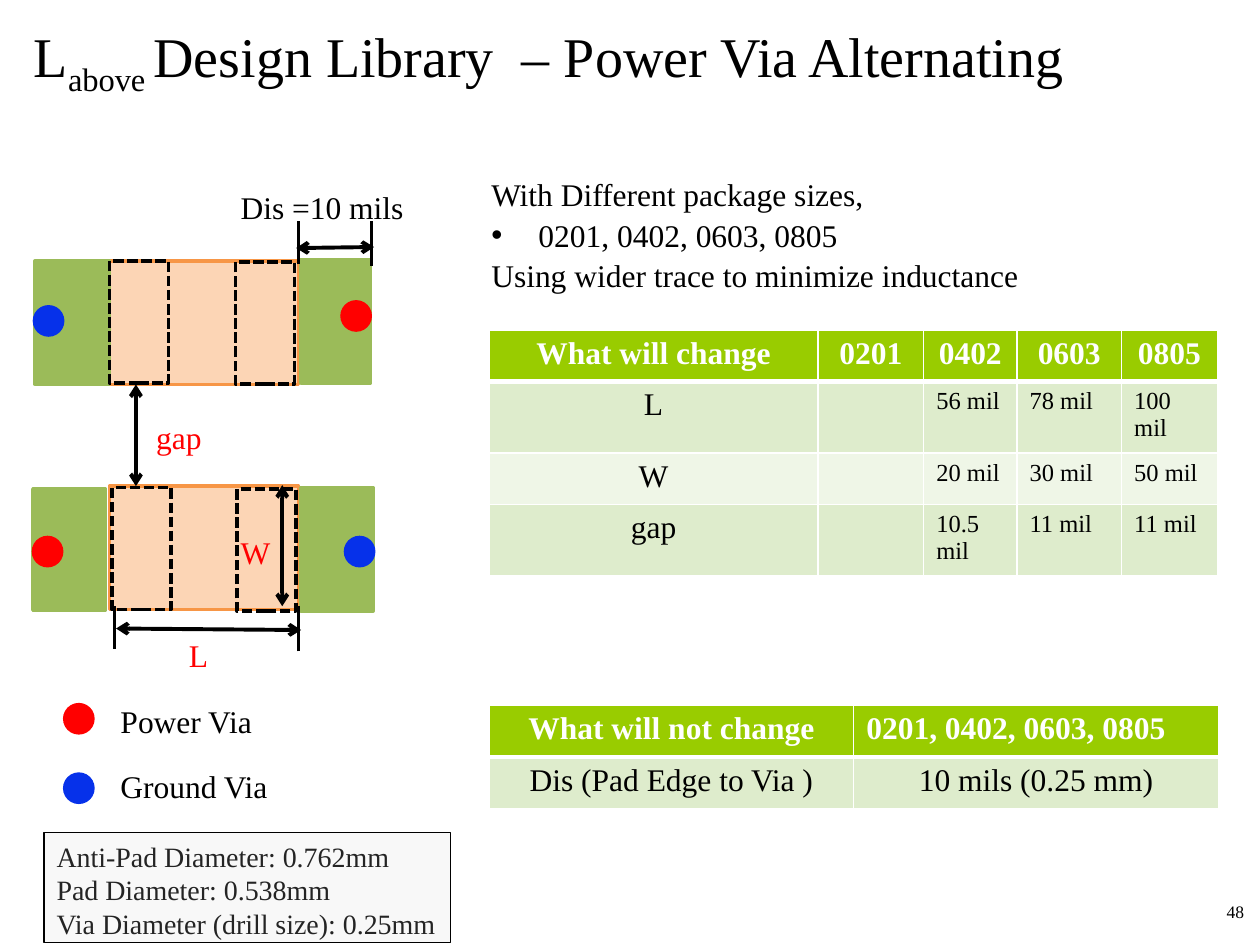
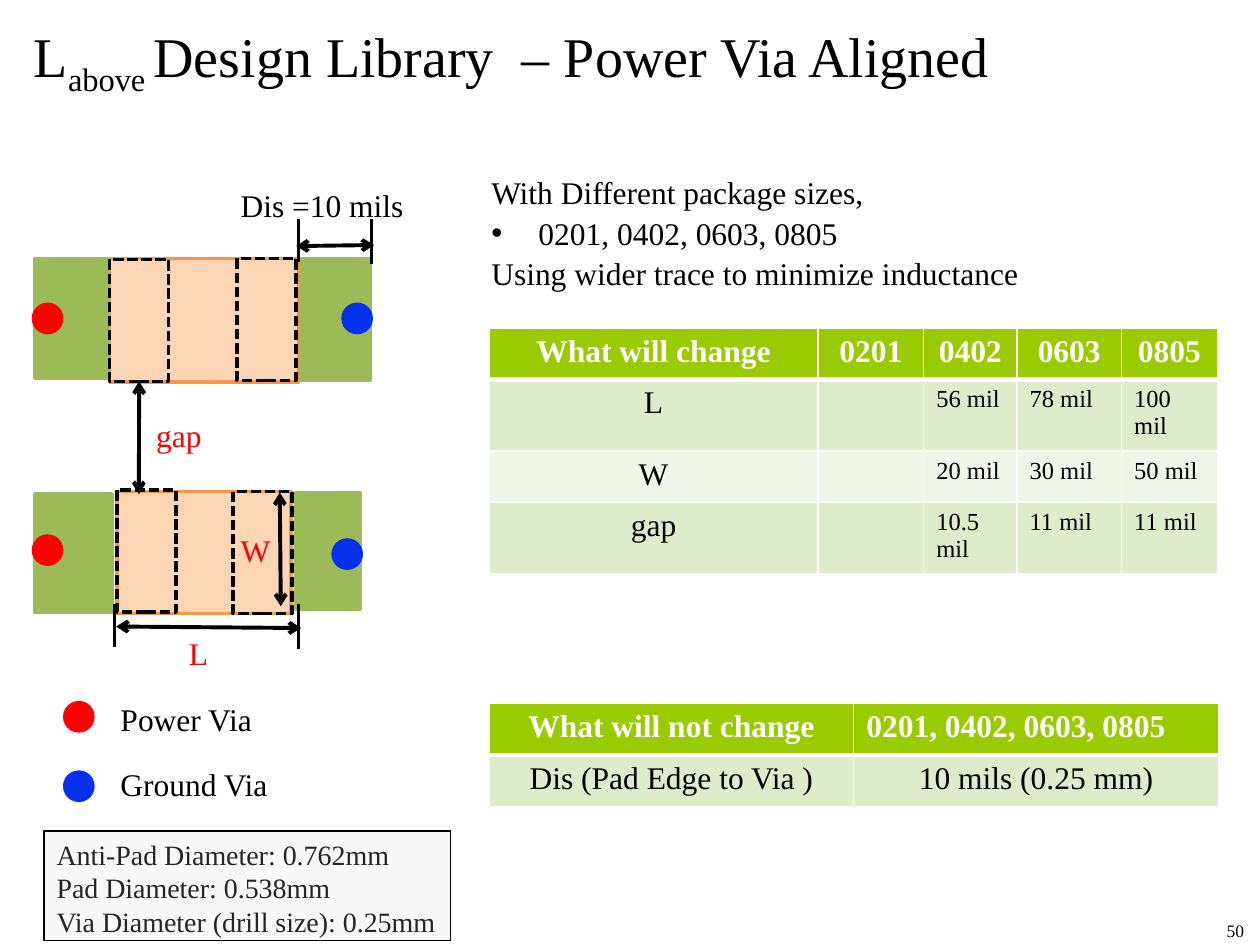
from dataclasses import dataclass

from pptx import Presentation
from pptx.dml.color import RGBColor
from pptx.enum.dml import MSO_LINE
from pptx.enum.shapes import MSO_CONNECTOR, MSO_SHAPE
from pptx.enum.text import MSO_ANCHOR, MSO_AUTO_SIZE, PP_ALIGN
from pptx.oxml.ns import qn
from pptx.util import Cm, Pt
from lxml import etree

FONT = "Times New Roman"
BLACK = RGBColor(0x00, 0x00, 0x00)
WHITE = RGBColor(0xFF, 0xFF, 0xFF)
RED = RGBColor(0xFF, 0x00, 0x00)
BLUE = RGBColor(0x06, 0x31, 0xEA)
PEACH = RGBColor(0xFC, 0xD5, 0xB5)
ORANGE = RGBColor(0xF7, 0x96, 0x46)
GREEN = RGBColor(0x9B, 0xBB, 0x59)
LIME = RGBColor(0x99, 0xCC, 0x00)
MINT = RGBColor(0xDE, 0xEC, 0xCC)
PALE = RGBColor(0xEF, 0xF6, 0xE7)
GREY = RGBColor(0xD9, 0xD9, 0xD9)

RECT, OVAL = MSO_SHAPE.RECTANGLE, MSO_SHAPE.OVAL
CHIP = MSO_SHAPE.FLOWCHART_PROCESS
DASH, LINE = MSO_LINE.SQUARE_DOT, MSO_CONNECTOR.STRAIGHT
LEFT, MID, RIGHT = PP_ALIGN.LEFT, PP_ALIGN.CENTER, PP_ALIGN.RIGHT
LOW, TOP, NO_FIT = MSO_ANCHOR.BOTTOM, MSO_ANCHOR.TOP, MSO_AUTO_SIZE.NONE

DOT = 0.64            # via diameter, cm
SLOT = (1.19, 2.46)   # dashed pad outline, cm


@dataclass
class Box:
    x: float
    y: float
    w: float
    h: float

    def at(self) -> tuple:
        return Cm(self.x), Cm(self.y), Cm(self.w), Cm(self.h)


@dataclass
class Via:
    x: float
    y: float
    color: RGBColor


@dataclass
class Span:
    x1: float
    y1: float
    x2: float
    y2: float


@dataclass
class Label:
    text: str
    box: Box
    color: RGBColor = BLACK


@dataclass
class Layout:
    name: str
    page: str
    foot: float
    shift: float
    chips: list
    pads: list
    vias: list
    slots: list
    width: Span
    gap: Span


SLIDES = [
    Layout("Alternating", "48", 18.03, 0,
           [Box(2.21, 9.8, 3.81, 2.49), Box(2.21, 5.26, 3.81, 2.49)],
           [Box(0.71, 5.26, 1.5, 2.49), Box(6.07, 5.23, 1.4, 2.49),
            Box(0.66, 9.86, 1.47, 2.44), Box(6.07, 9.83, 1.45, 2.49)],
           [Via(0.66, 6.15, BLUE), Via(6.86, 6.05, RED),
            Via(0.64, 10.8, RED), Via(6.93, 10.8, BLUE)],
           [(2.21, 5.26), (4.75, 5.28), (2.26, 9.83), (4.78, 9.86)],
           Span(5.69, 12.22, 5.69, 9.78), Span(2.74, 9.8, 2.74, 7.75)),
    Layout("Aligned", "50", 18.42, -0.04,
           [Box(2.36, 9.91, 3.51, 2.46), Box(2.21, 5.21, 3.81, 2.49)],
           [Box(0.71, 5.21, 1.45, 2.41), Box(6.07, 5.21, 1.4, 2.46),
            Box(0.71, 9.96, 1.55, 2.39), Box(5.97, 9.93, 1.3, 2.36)],
           [Via(0.64, 6.1, RED), Via(6.88, 6.1, BLUE),
            Via(0.64, 10.77, RED), Via(6.68, 10.85, BLUE)],
           [(2.21, 5.23), (4.78, 5.21), (2.36, 9.88), (4.7, 9.91)],
           Span(5.66, 12.22, 5.64, 9.93), Span(2.8, 9.96, 2.8, 7.7)),
]

# Parts that both slides share
LABELS = [
    Label("Dis =10 mils", Box(4.6, 3.66, 3.96, 1.02)),
    Label("L", Box(3.56, 12.7, 1.04, 1.04), RED),
    Label("W", Box(4.6, 10.62, 1.02, 1.02), RED),
    Label("gap", Box(2.9, 8.31, 1.98, 1.02), RED),
    Label("Power Via", Box(2.18, 14.02, 3.96, 1.02)),
    Label("Ground Via", Box(2.18, 15.34, 3.96, 1.02)),
]
KEYS = [Via(1.27, 14.17, RED), Via(1.27, 15.57, BLUE)]
ARROWS = [Span(2.34, 12.67, 6.07, 12.7), Span(5.97, 5.0, 7.54, 4.98)]
TICKS = [Span(2.31, 13.08, 2.31, 12.22), Span(6.02, 13.13, 6.02, 12.22),
         Span(6.02, 5.33, 6.02, 4.45), Span(7.49, 5.36, 7.49, 4.45)]
SIZES = "0201, 0402, 0603, 0805"
LINES = ["With Different package sizes,", SIZES,
         "Using wider trace to minimize inductance"]
NOTE = ["Anti-Pad Diameter: 0.762mm", "Pad Diameter: 0.538mm",
        "Via Diameter (drill size): 0.25mm"]
CHANGE = [["What will change", "0201", "0402", "0603", "0805"],
          ["L", "", "56 mil", "78 mil", "100 mil"],
          ["W", "", "20 mil", "30 mil", "50 mil"],
          ["gap", "", "10.5 mil", "11 mil", "11 mil"]]
FIXED = [["What will not change", SIZES],
         ["Dis (Pad Edge to Via )", "10 mils (0.25 mm)"]]


def style(frame, size: float, color: RGBColor = BLACK,
          align: PP_ALIGN = LEFT, bold: bool = False) -> None:
    for para in frame.paragraphs:
        para.alignment = align
        for run in para.runs:
            font = run.font
            font.name, font.size, font.bold = FONT, Pt(size), bold
            font.color.rgb = color


def add_text(slide, text: str, box: Box, size: float = 18,
             color: RGBColor = BLACK, align: PP_ALIGN = LEFT,
             wrap: bool = True) -> None:
    frame = slide.shapes.add_textbox(*box.at()).text_frame
    frame.word_wrap = wrap
    frame.text = text
    style(frame, size, color, align)


def add_box(slide, kind: MSO_SHAPE, box: Box, fill: RGBColor | None = None,
            line: RGBColor | None = None, width: float = 2):
    shape = slide.shapes.add_shape(kind, *box.at())
    shape.shadow.inherit = False
    if fill is None:
        shape.fill.background()
    else:
        shape.fill.solid()
        shape.fill.fore_color.rgb = fill
    if line is None:
        shape.line.fill.background()
    else:
        shape.line.color.rgb = line
        shape.line.width = Pt(width)
    return shape


def add_via(slide, via: Via, shift: float = 0) -> None:
    add_box(slide, OVAL, Box(via.x, via.y + shift, DOT, DOT), via.color)


def add_line(slide, span: Span, shift: float = 0, arrow: bool = True):
    line = slide.shapes.add_connector(
        LINE, Cm(span.x1), Cm(span.y1 + shift),
        Cm(span.x2), Cm(span.y2 + shift))
    line.line.color.rgb = BLACK
    line.line.width = Pt(2.25 if arrow else 1.5)
    if arrow:
        pen = line.line._get_or_add_ln()
        for end in ("a:headEnd", "a:tailEnd"):
            etree.SubElement(pen, qn(end), type="arrow")
    etree.SubElement(line._element.spPr, qn("a:effectLst"))
    return line


def add_edge(cell, side: str, width: float) -> None:
    props = cell._tc.get_or_add_tcPr()
    edge = etree.SubElement(props, qn(f"a:ln{side}"), w=str(Pt(width)))
    fill = etree.SubElement(edge, qn("a:solidFill"))
    etree.SubElement(fill, qn("a:srgbClr"), val=str(WHITE))


def add_grid(slide, data: list, x: float, y: float,
             cols: list, rows: list) -> None:
    box = Box(x, y, sum(cols), sum(rows))
    table = slide.shapes.add_table(len(rows), len(cols), *box.at()).table
    table.horz_banding = False
    for col, width in zip(table.columns, cols):
        col.width = Cm(width)
    for i, (row, height) in enumerate(zip(table.rows, rows)):
        row.height = Cm(height)
        for j, cell in enumerate(row.cells):
            head, value = i == 0, data[i][j]
            for side in "LRTB":
                thick = (head and side == "B") or (i == 1 and side == "T")
                add_edge(cell, side, 3 if thick else 1)
            cell.fill.solid()
            cell.fill.fore_color.rgb = LIME if head else (PALE, MINT)[i % 2]
            cell.text = value
            mils = value.endswith(" mil")
            style(cell.text_frame, 14 if mils else 18,
                  WHITE if head else BLACK,
                  LEFT if mils or value == SIZES else MID, head)


def set_title(slide, name: str) -> None:
    title = slide.shapes.title
    title.left, title.top, title.width, title.height = Box(
        0.43, 0, 24.97, 2.11).at()
    frame = title.text_frame
    frame.auto_size, frame.vertical_anchor = NO_FIT, LOW
    para = frame.paragraphs[0]
    for text in ("L", "above ", f"Design Library  – Power Via {name}"):
        para.add_run().text = text
    style(frame, 32)
    para.runs[1].font._element.set("baseline", "-25000")


def set_body(slide, shift: float) -> None:
    body = slide.placeholders[1]
    body.left, body.top, body.width, body.height = Box(
        9.65, 3.35 + shift, 12.7, 2.72).at()
    frame = body.text_frame
    frame.auto_size, frame.vertical_anchor = NO_FIT, TOP
    frame.text = "\n".join(LINES)
    for para in frame.paragraphs:
        para.space_before, para.line_spacing = Pt(0), 1.07
        props = para._p.get_or_add_pPr()
        item = para.text == SIZES
        dent = Cm(0.95) if item else 0
        props.set("marL", str(dent))
        props.set("indent", str(-dent))
        if item:
            etree.SubElement(props, qn("a:buFont"), typeface="Arial")
            etree.SubElement(props, qn("a:buChar"), char="•")
        else:
            etree.SubElement(props, qn("a:buNone"))
    style(frame, 18)


def add_note(slide, shift: float) -> None:
    y = 16.79 + shift
    add_text(slide, "\n".join(NOTE), Box(0.89, y, 8.28, 2.31), 16, wrap=False)
    veil = add_box(slide, RECT, Box(0.89, y, 8.2, 2.21), GREY, BLACK, 0.75)
    tint = veil._element.spPr.find(qn("a:solidFill"))[0]
    etree.SubElement(tint, qn("a:alpha"), val="17000")


def draw(slide, plan: Layout) -> None:
    shift = plan.shift
    set_title(slide, plan.name)
    set_body(slide, shift)
    add_text(slide, plan.page, Box(19.41, plan.foot, 5.92, 1.07), 10,
             align=RIGHT)

    # Capacitors with their pads and vias
    for chip in plan.chips:
        add_box(slide, CHIP, chip, PEACH, ORANGE)
    for pad in plan.pads:
        add_box(slide, RECT, pad, GREEN, GREEN)
    for via in plan.vias:
        add_via(slide, via)
    slots = [add_box(slide, RECT, Box(x, y, *SLOT), line=BLACK)
             for x, y in plan.slots]
    for slot in slots:
        slot.line.dash_style = DASH

    # Dimensions
    add_line(slide, plan.width)
    gap = add_line(slide, plan.gap)
    if abs(slots[0].left + slots[0].width // 2 - gap.end_x) < Cm(0.03):
        gap.end_connect(slots[0], 2)
    for span in ARROWS:
        add_line(slide, span, shift)
    for tick in TICKS:
        add_line(slide, tick, shift, arrow=False)

    # Labels, legend and note
    for label in LABELS:
        box = label.box
        add_text(slide, label.text, Box(box.x, box.y + shift, box.w, box.h),
                 color=label.color)
    for key in KEYS:
        add_via(slide, key, shift)
    add_note(slide, shift)

    # Tables
    add_grid(slide, CHANGE, 9.86, 6.65 + shift,
             [6.63, 2.13, 1.88, 2.11, 1.93], [1.04, 1.42, 1.04, 1.42])
    add_grid(slide, FIXED, 9.86, 14.22 + shift, [7.35] * 2, [1.04] * 2)


def main() -> None:
    deck = Presentation()
    deck.slide_width, deck.slide_height = Cm(25.4), Cm(19.05)
    for plan in SLIDES:
        draw(deck.slides.add_slide(deck.slide_layouts[1]), plan)
    deck.save("out.pptx")


if __name__ == "__main__":
    main()
